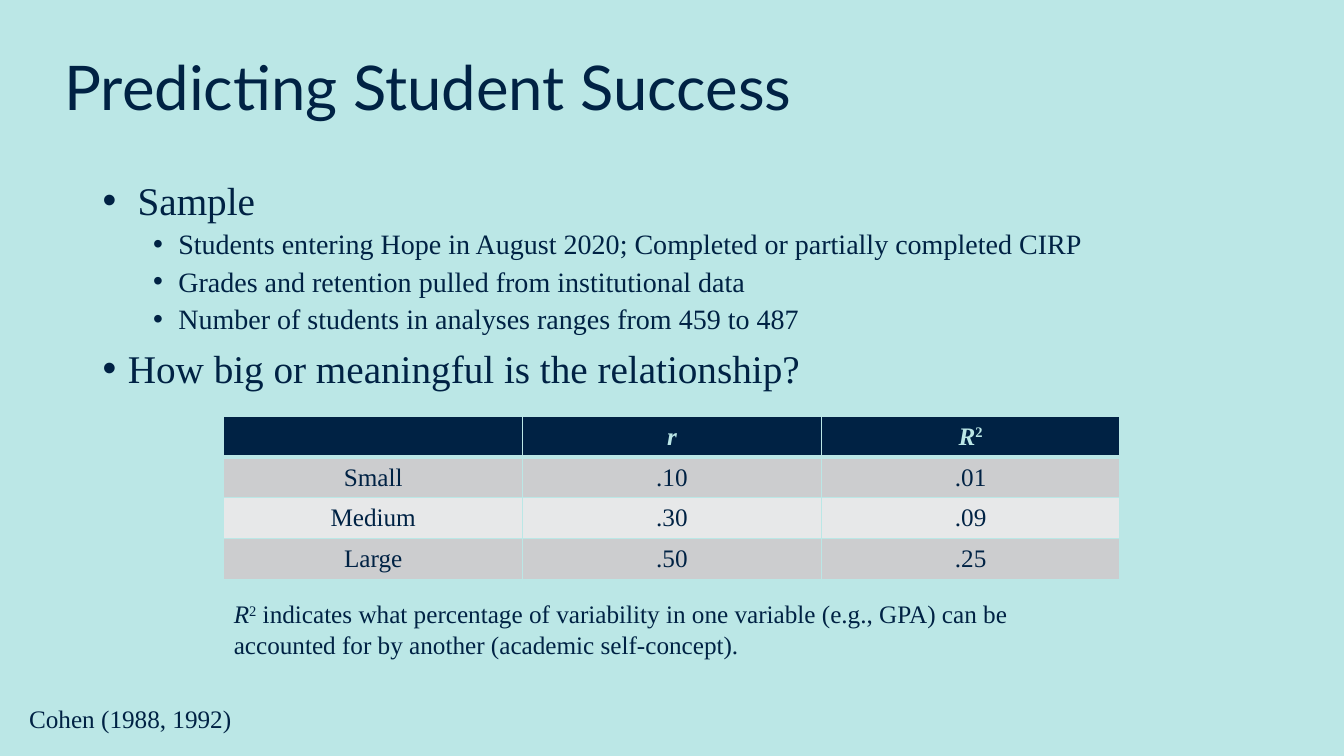
from dataclasses import dataclass
from lxml import etree
from pptx import Presentation
from pptx.dml.color import RGBColor
from pptx.enum.text import MSO_ANCHOR, PP_ALIGN
from pptx.oxml.ns import qn
from pptx.util import Inches, Pt

MIDDLE = MSO_ANCHOR.MIDDLE
TOP = MSO_ANCHOR.TOP
CENTER = PP_ALIGN.CENTER
LEFT = PP_ALIGN.LEFT

TITLE = "Predicting Student Success"
POINTS = [
    (0, " Sample"),
    (1, "Students entering Hope in August 2020; Completed or partially completed CIRP"),
    (1, "Grades and retention pulled from institutional data"),
    (1, "Number of students in analyses ranges from 459 to 487"),
    (0, "How big or meaningful is the relationship?"),
]
ROWS = [
    [[], [("r", "i")], [("R", "i"), ("2", "sup")]],
    [[("Small", "")], [(".10", "")], [(".01", "")]],
    [[("Medium", "")], [(".30", "")], [(".09", "")]],
    [[("Large", "")], [(".50", "")], [(".25", "")]],
]
NOTE = [
    ("R", "i"),
    ("2", "sup"),
    (" indicates what percentage of variability in one variable (e.g., GPA) "
     "can be accounted for by another (academic self-concept).", ""),
]
CITE = [("Cohen (1988, 1992)", "")]


@dataclass(frozen=True)
class Theme:
    paper: str = "BBE7E6"
    ink: str = "002244"
    bands: tuple = ("E7E8E9", "CCCDCF")
    head: str = "Lato"
    body: str = "Times New Roman"
    title: int = 44
    levels: tuple = (28, 20)
    small: int = 18


THEME = Theme()


def color(code):
    return RGBColor.from_string(code)


def add_run(para, text, size, style="", face=THEME.body, ink=THEME.ink, bold=False):
    run = para.add_run()
    run.text = text
    font = run.font
    font.name, font.size, font.bold = face, Pt(size), bold
    font.italic = style == "i"
    font.color.rgb = color(ink)
    if style == "sup":
        run._r.get_or_add_rPr().set("baseline", "30000")


def add_text(slide, box, runs):
    frame = slide.shapes.add_textbox(*map(Inches, box)).text_frame
    frame.word_wrap = True
    for text, style in runs:
        add_run(frame.paragraphs[0], text, THEME.small, style)


def add_points(slide, box):
    frame = slide.shapes.add_textbox(*map(Inches, box)).text_frame
    frame.word_wrap = True
    for i, (level, text) in enumerate(POINTS):
        para = frame.add_paragraph() if i else frame.paragraphs[0]
        para.level = level
        props = para._p.get_or_add_pPr()
        props.set("marL", str(Inches(0.25 + 0.5 * level)))
        props.set("indent", str(-Inches(0.25)))
        etree.SubElement(props, qn("a:buFont")).set("typeface", "Arial")
        etree.SubElement(props, qn("a:buChar")).set("char", "•")
        para.line_spacing = 0.9
        para.space_before = Pt((10, 5)[level] if i else 0)
        add_run(para, text, THEME.levels[level])


def add_edge(cell, side, width):
    line = etree.SubElement(cell._tc.get_or_add_tcPr(), qn("a:" + side))
    line.set("w", str(Pt(width)))
    fill = etree.SubElement(line, qn("a:solidFill"))
    etree.SubElement(fill, qn("a:srgbClr")).set("val", THEME.paper)


def add_grid(slide, box):
    grid = slide.shapes.add_table(len(ROWS), len(ROWS[0]), *map(Inches, box)).table
    for i, row in enumerate(ROWS):
        head = i == 0
        for j, runs in enumerate(row):
            cell = grid.cell(i, j)
            for side in ("lnL", "lnR", "lnT", "lnB"):
                thick = (head and side == "lnB") or (i == 1 and side == "lnT")
                add_edge(cell, side, 3 if thick else 1)
            cell.fill.solid()
            cell.fill.fore_color.rgb = color(THEME.ink if head else THEME.bands[i % 2])
            cell.vertical_anchor = MIDDLE
            para = cell.text_frame.paragraphs[0]
            para.alignment = CENTER
            for text, style in runs:
                add_run(para, text, THEME.small, style,
                        ink=THEME.paper if head else THEME.ink, bold=head)


def add_title(slide, box):
    title = slide.shapes.title
    title.left, title.top, title.width, title.height = map(Inches, box)
    frame = title.text_frame
    frame.word_wrap = True
    frame.vertical_anchor = MIDDLE
    para = frame.paragraphs[0]
    para.alignment = LEFT
    para.line_spacing = 0.9
    add_run(para, TITLE, THEME.title, face=THEME.head)


def main():
    deck = Presentation()
    deck.slide_width, deck.slide_height = Inches(13.33), Inches(7.5)
    slide = deck.slides.add_slide(deck.slide_layouts[5])
    back = slide.background.fill
    back.solid()
    back.fore_color.rgb = color(THEME.paper)
    add_title(slide, (0.54, 0.17, 11.5, 1.45))
    add_points(slide, (0.92, 1.75, 11.5, 5.01))
    add_grid(slide, (2.22, 4.13, 8.89, 1.62))
    add_text(slide, (2.22, 5.89, 8.89, 0.71), NOTE)
    add_text(slide, (0.19, 6.93, 3.38, 0.4), CITE)
    deck.save("out.pptx")


if __name__ == "__main__":
    main()
